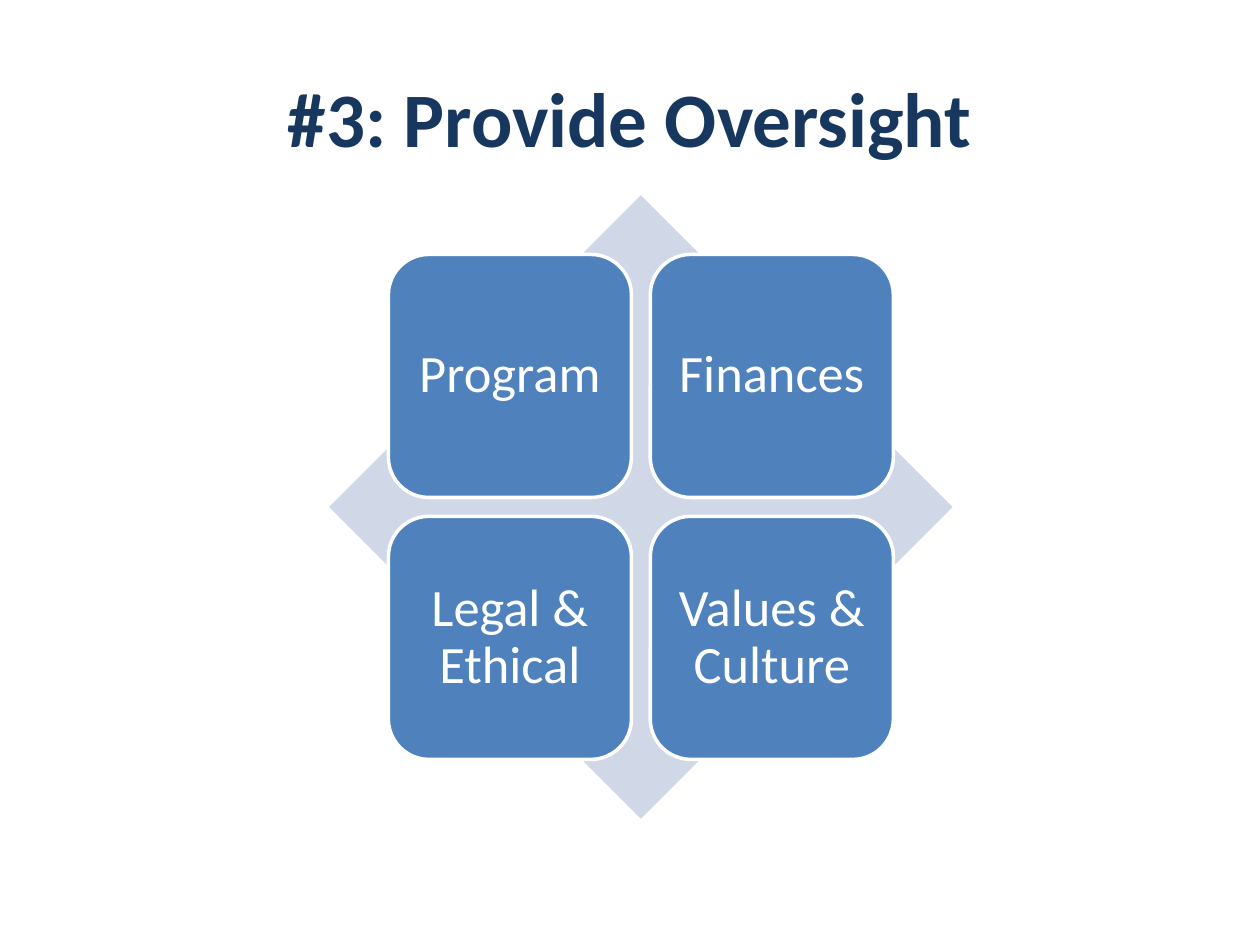
import pptx
import pptx.dml.color
import pptx.enum.shapes
import pptx.enum.text
import pptx.util
from pptx.util import Cm

NAVY = pptx.dml.color.RGBColor(0x17, 0x37, 0x5E)
BLUE = pptx.dml.color.RGBColor(0x4F, 0x81, 0xBD)
PALE_BLUE = pptx.dml.color.RGBColor(0xD0, 0xD8, 0xE8)
WHITE = pptx.dml.color.RGBColor(0xFF, 0xFF, 0xFF)

FONT = "Calibri"
CENTER_X, CENTER_Y = Cm(12.92), Cm(10.22)
DIAMOND_SIZE = Cm(12.57)
TILE_SIZE = Cm(4.9)
TILE_GAP = Cm(0.38)
TILE_INSET = Cm(0.3)
OVERSIGHT_AREAS = [
    ["Program", "Finances"],
    ["Legal & Ethical", "Values & Culture"],
]


def write_centered(shape, text, size, color, bold=False):
    frame = shape.text_frame
    frame.word_wrap = True
    frame.vertical_anchor = pptx.enum.text.MSO_ANCHOR.MIDDLE
    paragraph = frame.paragraphs[0]
    paragraph.alignment = pptx.enum.text.PP_ALIGN.CENTER
    run = paragraph.add_run()
    run.text = text
    run.font.name = FONT
    run.font.size = pptx.util.Pt(size)
    run.font.bold = bold
    run.font.color.rgb = color
    return paragraph


def add_title(slide, text):
    title = slide.shapes.add_textbox(Cm(1.27), Cm(0.76), Cm(22.86), Cm(3.18))
    write_centered(title, text, 44, NAVY, bold=True)


def add_filled_shape(slide, kind, left, top, size, color):
    shape = slide.shapes.add_shape(kind, left, top, size, size)
    shape.shadow.inherit = False
    shape.fill.solid()
    shape.fill.fore_color.rgb = color
    shape.line.fill.background()
    return shape


def add_diamond(slide):
    add_filled_shape(
        slide, pptx.enum.shapes.MSO_SHAPE.DIAMOND,
        CENTER_X - DIAMOND_SIZE // 2, CENTER_Y - DIAMOND_SIZE // 2,
        DIAMOND_SIZE, PALE_BLUE)


def add_tile(slide, left, top, text):
    tile = add_filled_shape(
        slide, pptx.enum.shapes.MSO_SHAPE.ROUNDED_RECTANGLE,
        left, top, TILE_SIZE, BLUE)
    tile.line.color.rgb = WHITE
    tile.line.width = pptx.util.Pt(2)
    frame = tile.text_frame
    frame.margin_left = frame.margin_right = TILE_INSET
    frame.margin_top = frame.margin_bottom = TILE_INSET
    write_centered(tile, text, 30, WHITE).line_spacing = 0.9


def add_tile_grid(slide):
    """Place the tiles in a square grid around the diamond's center."""
    pitch = TILE_SIZE + TILE_GAP
    half_span = TILE_SIZE + TILE_GAP // 2
    for row, areas in enumerate(OVERSIGHT_AREAS):
        for column, area in enumerate(areas):
            add_tile(slide, CENTER_X - half_span + column * pitch,
                     CENTER_Y - half_span + row * pitch, area)


def main():
    presentation = pptx.Presentation()
    presentation.slide_width = Cm(25.4)
    presentation.slide_height = Cm(19.05)
    slide = presentation.slides.add_slide(presentation.slide_layouts[6])
    add_title(slide, "#3: Provide Oversight")
    add_diamond(slide)
    add_tile_grid(slide)
    presentation.save("out.pptx")


if __name__ == "__main__":
    main()
